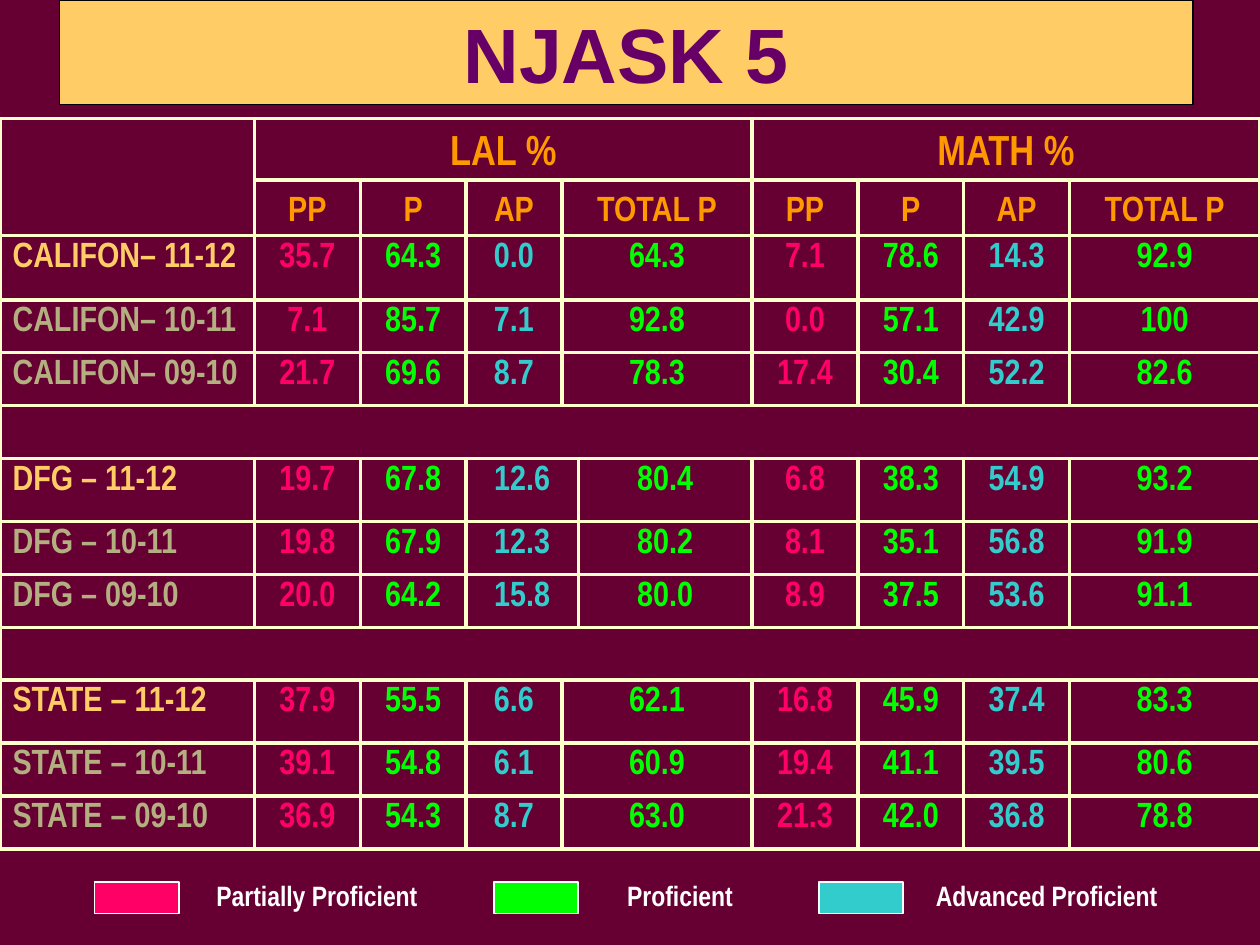
import lxml.etree
import pptx
import pptx.dml.color
import pptx.enum.shapes
import pptx.enum.text
import pptx.oxml.ns
import pptx.util

Inches = pptx.util.Inches
ALIGN = pptx.enum.text.PP_ALIGN
ANCHOR = pptx.enum.text.MSO_ANCHOR

COLORS = {
    "background": "660033", "banner": "FFCC66", "title": "660066", "black": "000000",
    "white": "FFFFFF", "border": "FFFFCC", "heading": "FF9900",
    "current": "FFCC66", "earlier": "B4AF80",
    "partial": "FF0066", "proficient": "00FF00", "advanced": "33CCCC",
}
COLUMN_WIDTHS = [2.02, 0.84, 0.84, 0.76, 0.13, 1.38, 0.84, 0.84, 0.84, 1.51]
ROW_HEIGHTS = [0.49, 0.44, 0.51, 0.42, 0.42, 0.42, 0.5, 0.42, 0.42, 0.42, 0.5, 0.42, 0.42]
MEASURES = ["PP", "P", "AP", "TOTAL P"] * 2
MEASURE_COLORS = ["partial", "proficient", "advanced", "proficient"] * 2
# Grid columns where the eight measures start; the narrow column 4 joins TOTAL P or AP.
WIDE_TOTAL = [1, 2, 3, 4, 6, 7, 8, 9]
WIDE_ADVANCED = [1, 2, 3, 5, 6, 7, 8, 9]
GROUPS = [
    (2, WIDE_TOTAL, [
        ("CALIFON– 11-12", "35.7 64.3 0.0 64.3 7.1 78.6 14.3 92.9"),
        ("CALIFON– 10-11", "7.1 85.7 7.1 92.8 0.0 57.1 42.9 100"),
        ("CALIFON– 09-10", "21.7 69.6 8.7 78.3 17.4 30.4 52.2 82.6"),
    ]),
    (6, WIDE_ADVANCED, [
        ("DFG – 11-12", "19.7 67.8 12.6 80.4 6.8 38.3 54.9 93.2"),
        ("DFG – 10-11", "19.8 67.9 12.3 80.2 8.1 35.1 56.8 91.9"),
        ("DFG – 09-10", "20.0 64.2 15.8 80.0 8.9 37.5 53.6 91.1"),
    ]),
    (10, WIDE_TOTAL, [
        ("STATE – 11-12", "37.9 55.5 6.6 62.1 16.8 45.9 37.4 83.3"),
        ("STATE – 10-11", "39.1 54.8 6.1 60.9 19.4 41.1 39.5 80.6"),
        ("STATE – 09-10", "36.9 54.3 8.7 63.0 21.3 42.0 36.8 78.8"),
    ]),
]
LEGEND = [
    ("Partially Proficient", "partial", 0.75, 1.62, 1.8),
    ("Proficient", "proficient", 3.92, 4.88, 1.04),
    ("Advanced Proficient", "advanced", 6.5, 7.33, 1.96),
]


def rgb(name):
    return pptx.dml.color.RGBColor.from_string(COLORS[name])


class SlideBuilder:
    def __init__(self, slide, font):
        self.slide = slide
        self.font = font
        slide.background.fill.solid()
        slide.background.fill.fore_color.rgb = rgb("background")

    def add_text(self, frame, text, size, color, align=ALIGN.LEFT, font=None):
        para = frame.paragraphs[0]
        para.alignment = align
        span = para.add_run()
        span.text = text
        values = {"name": font or self.font, "size": pptx.util.Pt(size), "bold": True}
        for name, value in values.items():
            setattr(span.font, name, value)
        span.font.color.rgb = rgb(color)

    def rectangle(self, left, top, width, height, fill, line, weight):
        box = self.slide.shapes.add_shape(
            pptx.enum.shapes.MSO_SHAPE.RECTANGLE,
            Inches(left), Inches(top), Inches(width), Inches(height))
        box.shadow.inherit = False
        box.fill.solid()
        box.fill.fore_color.rgb = rgb(fill)
        box.line.color.rgb = rgb(line)
        box.line.width = pptx.util.Pt(weight)
        return box

    def label(self, left, top, width, height, text, size, color):
        box = self.slide.shapes.add_textbox(
            Inches(left), Inches(top), Inches(width), Inches(height))
        box.text_frame.word_wrap = False
        box.text_frame.auto_size = pptx.enum.text.MSO_AUTO_SIZE.SHAPE_TO_FIT_TEXT
        self.add_text(box.text_frame, text, size, color)

    def grid(self, left, top, widths, heights):
        """Add an unfilled table with every cell bordered."""
        table = self.slide.shapes.add_table(
            len(heights), len(widths), Inches(left), Inches(top),
            Inches(sum(widths)), Inches(sum(heights))).table
        table.first_row = table.horz_banding = False
        for column, width in zip(table.columns, widths):
            column.width = Inches(width)
        for row, height in zip(table.rows, heights):
            row.height = Inches(height)
        for cell in table.iter_cells():
            self.border(cell, "border", 2.25)
            cell.fill.background()
        return table

    def border(self, cell, color, weight):
        qn = pptx.oxml.ns.qn
        properties = cell._tc.get_or_add_tcPr()
        for side in ("lnL", "lnR", "lnT", "lnB"):
            line = lxml.etree.SubElement(
                properties, qn("a:" + side), w=str(pptx.util.Pt(weight)))
            fill = lxml.etree.SubElement(line, qn("a:solidFill"))
            lxml.etree.SubElement(fill, qn("a:srgbClr"), val=COLORS[color])

    def cell(self, table, row, column, text, color, size=20,
             align=ALIGN.CENTER, anchor=ANCHOR.TOP):
        cell = table.cell(row, column)
        cell.vertical_anchor = anchor
        self.add_text(cell.text_frame, text, size, color, align)


def merge(table, first, last):
    table.cell(*first).merge(table.cell(*last))


def add_scores(builder):
    table = builder.grid(0, 0.94, COLUMN_WIDTHS, ROW_HEIGHTS)
    merge(table, (0, 0), (1, 0))
    for text, first, last in [("LAL %", 1, 5), ("MATH %", 6, 9)]:
        merge(table, (0, first), (0, last))
        builder.cell(table, 0, first, text, "heading", size=24, anchor=ANCHOR.BOTTOM)
    merge(table, (1, 4), (1, 5))
    for column, text in zip(WIDE_TOTAL, MEASURES):
        builder.cell(table, 1, column, text, "heading", anchor=ANCHOR.BOTTOM)

    for start, columns, records in GROUPS:
        if start > 2:
            merge(table, (start - 1, 0), (start - 1, 9))
        for row, (name, scores) in enumerate(records, start):
            if columns is WIDE_TOTAL:
                merge(table, (row, 4), (row, 5))
            else:
                merge(table, (row, 3), (row, 4))
            name_color = "current" if row == start else "earlier"
            builder.cell(table, row, 0, name, name_color, align=ALIGN.LEFT)
            for column, score, color in zip(columns, scores.split(), MEASURE_COLORS):
                builder.cell(table, row, column, score, color)


def main():
    deck = pptx.Presentation()
    deck.slide_width, deck.slide_height = Inches(10), Inches(7.5)
    builder = SlideBuilder(deck.slides.add_slide(deck.slide_layouts[6]), "Arial Narrow")

    banner = builder.rectangle(0.47, 0, 9, 0.83, "banner", "black", 0.75)
    banner.text_frame.vertical_anchor = ANCHOR.MIDDLE
    builder.add_text(banner.text_frame, "NJASK 5", 44, "title", ALIGN.CENTER, "Arial")

    add_scores(builder)

    for text, color, swatch_left, label_left, label_width in LEGEND:
        builder.rectangle(swatch_left, 7, 0.67, 0.25, color, "white", 1)
        builder.label(label_left, 6.92, label_width, 0.37, text, 16, "white")

    deck.save("out.pptx")


if __name__ == "__main__":
    main()
